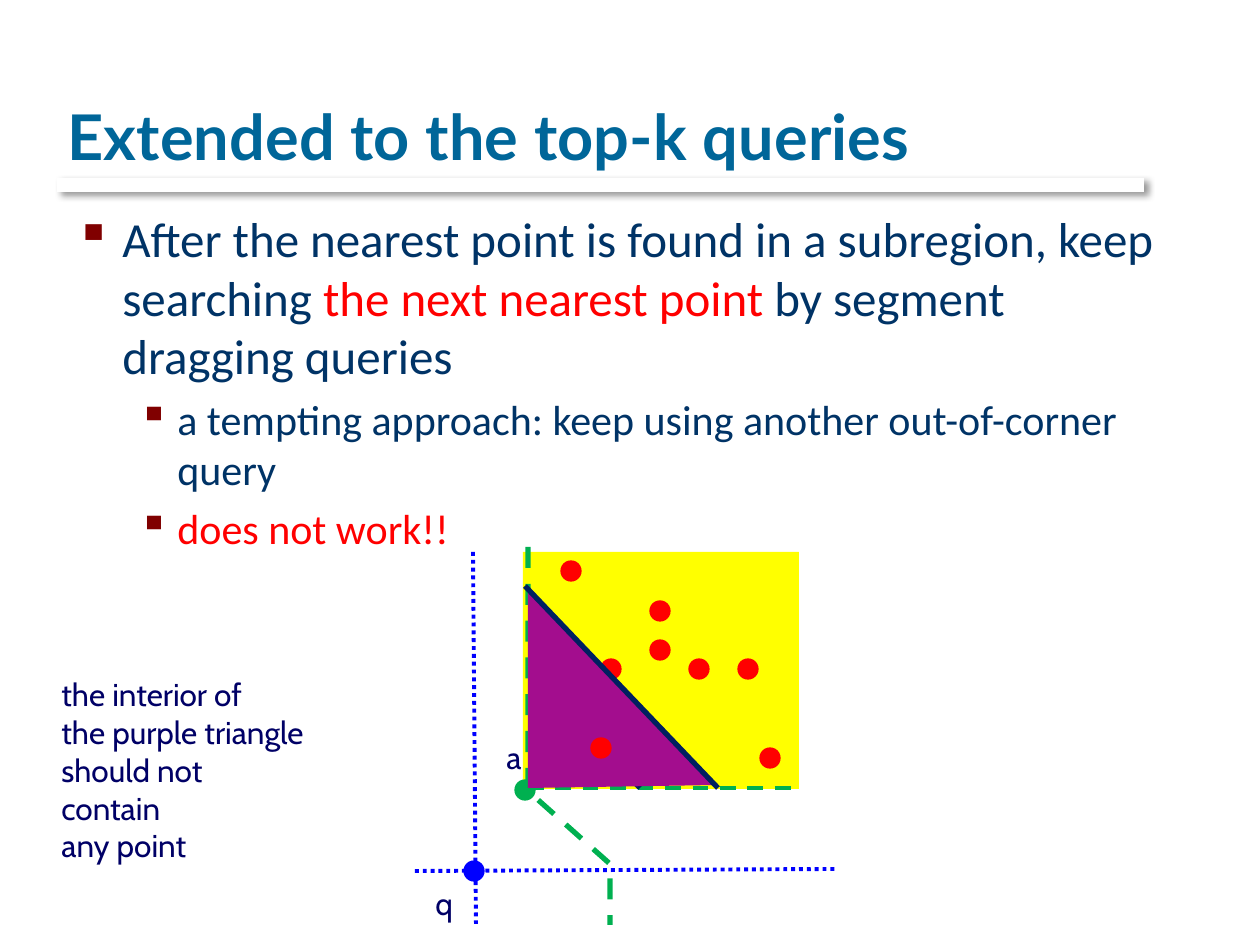
from lxml import etree
from pptx import Presentation
from pptx import util as u
from pptx.dml.color import RGBColor
from pptx.enum import dml, shapes, text
from pptx.oxml.ns import qn

PX_PER_INCH = 126
WHITE = RGBColor(0xFF, 0xFF, 0xFF)
TEAL = RGBColor(0x00, 0x66, 0x99)
NAVY = RGBColor(0x00, 0x33, 0x66)
INK = RGBColor(0x00, 0x00, 0x66)
EDGE = RGBColor(0x00, 0x20, 0x60)
MAROON = RGBColor(0x80, 0x00, 0x00)
RED = RGBColor(0xFF, 0x00, 0x00)
BLUE = RGBColor(0x00, 0x00, 0xFF)
GREEN = RGBColor(0x00, 0xB0, 0x50)
YELLOW = RGBColor(0xFF, 0xFF, 0x00)
PURPLE = RGBColor(0xA3, 0x0D, 0x8E)
DASH = dml.MSO_LINE.DASH
DOTS = dml.MSO_LINE.ROUND_DOT
DOT_SIZE = 20
OUTER_POINTS = [(650, 640), (650, 601), (561, 561), (738, 659),
                (760, 748), (601, 659), (689, 659)]
INNER_POINT = (591, 738)


def px(length):
    return u.Emu(round(length * 914400 / PX_PER_INCH))


def style_line(line, color, width, dash=None):
    line.color.rgb = color
    line.width = u.Pt(width)
    if dash is not None:
        line.dash_style = dash


def add_filled(page, kind, box, color):
    shape = page.shapes.add_shape(kind, *map(px, box))
    shape.shadow.inherit = False
    shape.fill.solid()
    shape.fill.fore_color.rgb = color
    shape.line.fill.background()
    return shape


def add_dot(page, corner, color):
    dot = add_filled(page, shapes.MSO_SHAPE.OVAL, (*corner, DOT_SIZE, DOT_SIZE), color)
    style_line(dot.line, color, 0.75)


def add_line(page, start, end, color, width, dash=None):
    line = page.shapes.add_connector(
        shapes.MSO_CONNECTOR.STRAIGHT, *map(px, (*start, *end)))
    etree.SubElement(line._element.spPr, qn("a:effectLst"))
    style_line(line.line, color, width, dash)


def add_outline(page, points, close):
    corners = [(px(x), px(y)) for x, y in points]
    builder = page.shapes.build_freeform(*corners[0], scale=1.0)
    builder.add_line_segments(corners[1:], close=close)
    outline = builder.convert_to_shape()
    outline.shadow.inherit = False
    return outline


def add_rule(page):
    rule = add_filled(page, shapes.MSO_SHAPE.RECTANGLE, (57, 178, 1087, 14), WHITE)
    effects = rule._element.spPr.find(qn("a:effectLst"))
    shadow = etree.SubElement(
        effects, qn("a:outerShdw"), blurRad=str(u.Pt(4)), dist=str(u.Pt(3)),
        dir="2700000", algn="ctr", rotWithShape="0")
    black = etree.SubElement(shadow, qn("a:srgbClr"), val="000000")
    etree.SubElement(black, qn("a:alpha"), val="40000")


def style_span(span, font, size, color):
    span.font.name = font
    span.font.size = u.Pt(size)
    span.font.color.rgb = color


def add_text(page, box, words, font, size, color, wrap=True):
    label = page.shapes.add_textbox(*map(px, box))
    frame = label.text_frame
    frame.word_wrap = wrap
    frame.text = words
    for para in frame.paragraphs:
        for span in para.runs:
            style_span(span, font, size, color)
    return frame


def add_bullet(para, level, size, indent, hang, pieces):
    para.level = level
    para.space_before = u.Pt(size * 0.2)
    for words, color in pieces:
        span = para.add_run()
        span.text = words
        style_span(span, "Calibri", size, color)
    props = para._p.get_or_add_pPr()
    props.set("marL", str(px(indent)))
    props.set("indent", str(-px(hang)))
    tint = etree.SubElement(props, qn("a:buClr"))
    etree.SubElement(tint, qn("a:srgbClr"), val=str(MAROON))
    etree.SubElement(props, qn("a:buChar"), char="▪")


def add_title(page):
    frame = add_text(page, (55, 21, 1071, 158), "Extended to the top-k queries",
                     "Lato", 36, TEAL)
    frame.vertical_anchor = text.MSO_ANCHOR.BOTTOM
    span = frame.paragraphs[0].runs[0]
    span.font.bold = True
    span.font._element.set("spc", "10")


def add_body(page):
    frame = add_text(page, (63, 202, 1119, 310), "", "Calibri", 28, NAVY)
    add_bullet(frame.paragraphs[0], 0, 28, 47, 47, [
        ("After the nearest point is found in a subregion, keep searching ", NAVY),
        ("the next nearest point ", RED),
        ("by segment dragging queries", NAVY)])
    for words, color in [
            ("a tempting approach: keep using another out-of-corner query", NAVY),
            ("does not work!!", RED)]:
        add_bullet(frame.add_paragraph(), 1, 24, 102, 39, [(words, color)])


def add_diagram(page):
    add_filled(page, shapes.MSO_SHAPE.RECTANGLE, (523, 552, 276, 237), YELLOW)
    add_dot(page, (464, 861), BLUE)
    add_text(page, (423, 878, 42, 50), "q", "Cabin", 18, INK, wrap=False)
    border = add_outline(page, [(528, 547), (528, 791), (610, 864), (610, 925)], False)
    border.fill.background()
    style_line(border.line, GREEN, 3, DASH)
    add_dot(page, (515, 780), GREEN)
    add_line(page, (473, 552), (476, 924), BLUE, 2.25, DOTS)
    add_line(page, (415, 871), (837, 869), BLUE, 2.25, DOTS)
    add_text(page, (494, 732, 39, 50), "a", "Cabin", 18, INK, wrap=False)
    add_line(page, (528, 788), (798, 788), GREEN, 2.25, DASH)
    add_line(page, (532, 679), (640, 788), EDGE, 3)
    for corner in OUTER_POINTS:
        add_dot(page, corner, RED)
    triangle = add_outline(page, [(528, 592), (528, 788), (718, 785)], True)
    triangle.fill.solid()
    triangle.fill.fore_color.rgb = PURPLE
    triangle.line.fill.background()
    add_dot(page, INNER_POINT, RED)
    add_line(page, (525, 586), (718, 788), EDGE, 3)


def add_note(page):
    lines = ["the interior of", "the purple triangle", "should not contain", "any point"]
    frame = add_text(page, (49, 669, 272, 165), "\n".join(lines), "Cabin", 18, INK)
    frame.margin_right = px(16)


def main():
    deck = Presentation()
    deck.slide_width, deck.slide_height = px(1260), px(945)
    page = deck.slides.add_slide(deck.slide_layouts[6])
    add_rule(page)
    add_title(page)
    add_body(page)
    add_diagram(page)
    add_note(page)
    deck.save("out.pptx")


if __name__ == "__main__":
    main()
